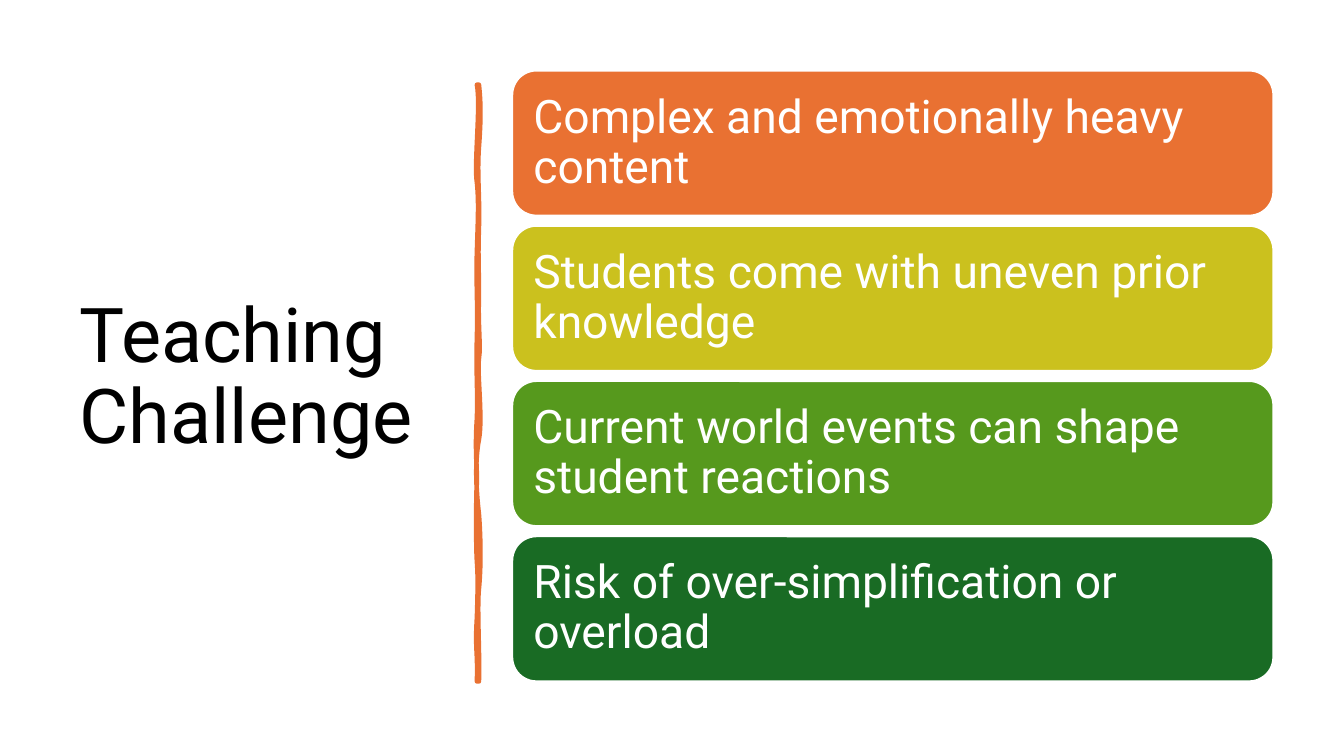
from lxml import etree
from pptx import Presentation
from pptx.dml.color import RGBColor
from pptx.enum.shapes import MSO_SHAPE
from pptx.enum.text import MSO_ANCHOR, MSO_AUTO_SIZE, PP_ALIGN
from pptx.oxml.ns import qn
from pptx.util import Inches, Pt

COLORS = {"ink": "000000", "paper": "FFFFFF", "orange": "E97132",
          "olive": "CBC11E", "green": "56991D", "forest": "196B24"}
FONT = "Roboto"
TITLE = "Teaching Challenge"
CHALLENGES = [
    ("Complex and emotionally heavy content", "orange"),
    ("Students come with uneven prior knowledge", "olive"),
    ("Current world events can shape student reactions", "green"),
    ("Risk of over-simplification or overload", "forest"),
]

# Lengths in inches
SLIDE_WIDTH, SLIDE_HEIGHT = 13.33, 7.5
TITLE_AREA = (0.69, 0.7, 3.74, 6.11)
CARD_LEFT, CARD_TOP, CARD_WIDTH, CARD_HEIGHT = 5.08, 0.7, 7.55, 1.44
CARD_GAP, CARD_INSET_X, CARD_INSET_Y = 0.1, 0.14, 0.14

# Hand-drawn divider: each edge has its x and curves as (bend, bend, end y)
DIVIDER_TOP, DIVIDER_BOTTOM = 0.84, 6.76
UNITS_PER_INCH = 100
RIGHT_X, RIGHT_CURVES = 4.75, [
    ((4.77, 1.02), (4.77, 1.19), 1.46), ((4.73, 1.73), (4.76, 1.95), 2.26),
    ((4.74, 2.57), (4.75, 2.62), 2.94), ((4.74, 3.25), (4.77, 3.42), 3.56),
    ((4.73, 3.7), (4.79, 4.14), 4.36), ((4.71, 4.57), (4.72, 4.84), 5.1),
    ((4.77, 5.36), (4.77, 5.64), 5.84), ((4.73, 6.03), (4.76, 6.5), 6.76),
]
LEFT_X, LEFT_CURVES = 4.73, [
    ((4.74, 6.46), (4.71, 6.44), 6.13), ((4.74, 5.83), (4.74, 5.7), 5.57),
    ((4.72, 5.44), (4.72, 4.95), 4.77), ((4.73, 4.59), (4.71, 4.45), 4.15),
    ((4.74, 3.86), (4.72, 3.73), 3.35), ((4.74, 2.98), (4.72, 2.81), 2.5),
    ((4.74, 2.18), (4.75, 2), 1.81), ((4.7, 1.63), (4.77, 1.04), 0.84),
]


def color(name):
    return RGBColor.from_string(COLORS[name])


def paint(shape, fill, line, width):
    shape.shadow.inherit = False
    shape.fill.solid()
    shape.fill.fore_color.rgb = color(fill)
    shape.line.color.rgb = color(line)
    shape.line.width = Pt(width)


def write(shape, words, size, ink, inset_x, inset_y):
    frame = shape.text_frame
    frame.text = words
    frame_format = {
        "word_wrap": True, "auto_size": MSO_AUTO_SIZE.NONE,
        "vertical_anchor": MSO_ANCHOR.MIDDLE,
        "margin_left": Inches(inset_x), "margin_right": Inches(inset_x),
        "margin_top": Inches(inset_y), "margin_bottom": Inches(inset_y),
    }
    for name, value in frame_format.items():
        setattr(frame, name, value)
    para = frame.paragraphs[0]
    para.alignment = PP_ALIGN.LEFT
    para.line_spacing = 0.9
    span = para.runs[0]
    for name, value in {"name": FONT, "size": Pt(size)}.items():
        setattr(span.font, name, value)
    span.font.color.rgb = color(ink)


def to_units(point):
    return tuple(round(length * UNITS_PER_INCH) for length in point)


def bend_segment(segment, bends):
    """Turn a straight outline segment into a cubic curve."""
    segment.tag = qn("a:cubicBezTo")
    origin = to_units((LEFT_X, DIVIDER_TOP))
    for position, bend in enumerate(bends):
        x, y = (value - start for value, start in zip(to_units(bend), origin))
        control = etree.Element(qn("a:pt"), x=str(x), y=str(y))
        segment.insert(position, control)


def add_divider(page):
    # The straight bottom end joins the two edges and has no bends
    steps = [((RIGHT_X, end), bends) for *bends, end in RIGHT_CURVES]
    steps.append(((LEFT_X, DIVIDER_BOTTOM), None))
    steps += [((LEFT_X, end), bends) for *bends, end in LEFT_CURVES]

    builder = page.shapes.build_freeform(
        *to_units((RIGHT_X, DIVIDER_TOP)), scale=Inches(1) / UNITS_PER_INCH)
    builder.add_line_segments([to_units(point) for point, _ in steps], close=True)
    divider = builder.convert_to_shape()
    paint(divider, "orange", "orange", 3.25)
    segments = list(divider.element.iter(qn("a:lnTo")))
    for segment, (_, bends) in zip(segments, steps):
        if bends:
            bend_segment(segment, bends)


def add_cards(page):
    for row, (words, fill) in enumerate(CHALLENGES):
        top = CARD_TOP + row * (CARD_HEIGHT + CARD_GAP)
        area = (CARD_LEFT, top, CARD_WIDTH, CARD_HEIGHT)
        card = page.shapes.add_shape(MSO_SHAPE.ROUNDED_RECTANGLE, *map(Inches, area))
        paint(card, fill, "paper", 1.5)
        write(card, words, 33, "paper", CARD_INSET_X, CARD_INSET_Y)


def main():
    deck = Presentation()
    deck.slide_width, deck.slide_height = Inches(SLIDE_WIDTH), Inches(SLIDE_HEIGHT)
    page = deck.slides.add_slide(deck.slide_layouts[5])
    title = page.shapes.title
    title.left, title.top, title.width, title.height = map(Inches, TITLE_AREA)
    write(title, TITLE, 54, "ink", 0.1, 0.05)
    add_divider(page)
    add_cards(page)
    deck.save("out.pptx")


if __name__ == "__main__":
    main()
